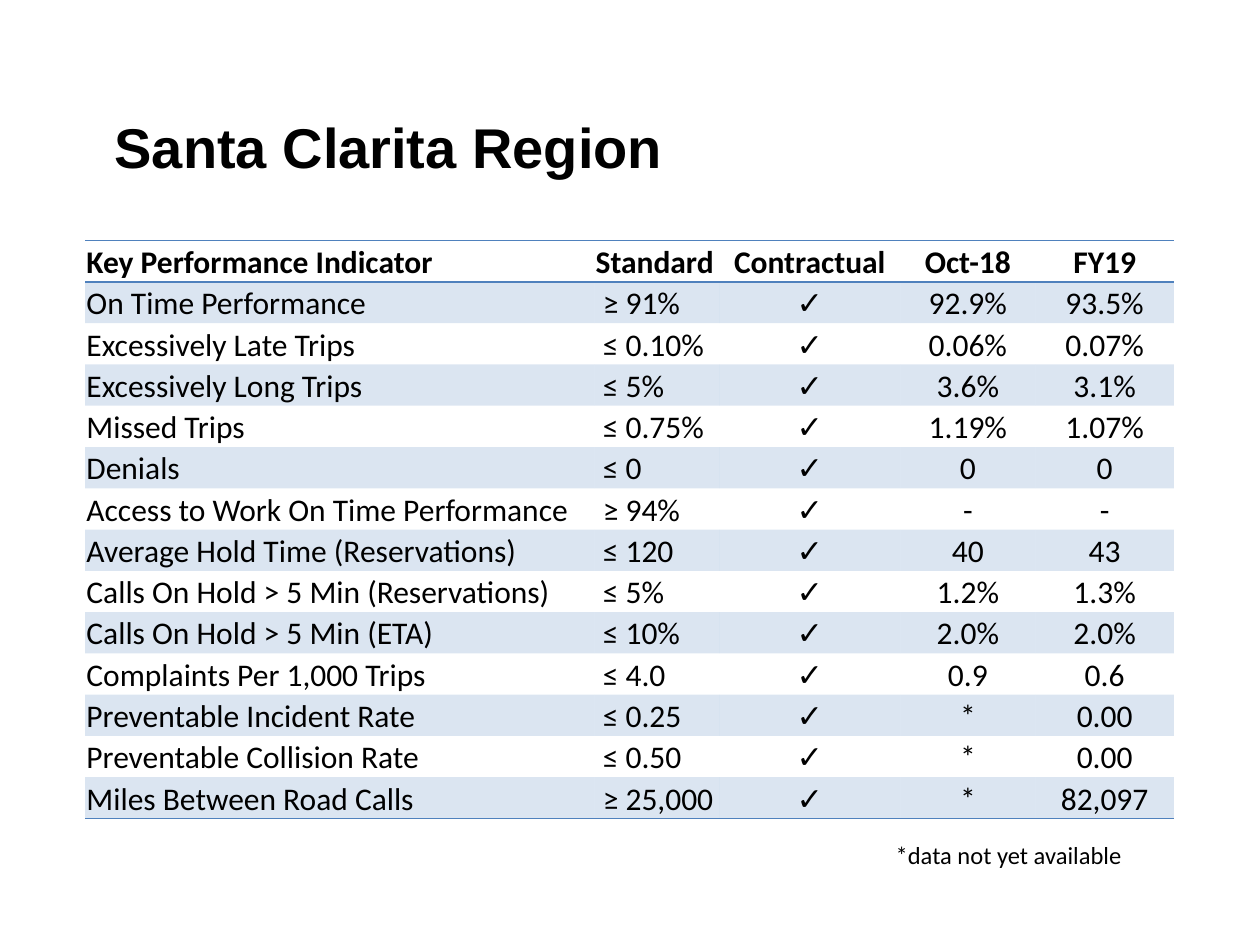
from lxml import etree
from pptx import Presentation
from pptx.dml.color import RGBColor
from pptx.enum.text import MSO_ANCHOR, PP_ALIGN
from pptx.oxml.ns import qn
from pptx.util import Pt

LEFT, CENTER, RIGHT = PP_ALIGN.LEFT, PP_ALIGN.CENTER, PP_ALIGN.RIGHT
MIDDLE, BOTTOM = MSO_ANCHOR.MIDDLE, MSO_ANCHOR.BOTTOM

THEME = {
    "ink": RGBColor(0, 0, 0),
    "accent": "4F81BD",
    "band_alpha": "20000",
    "plain_table": "{2D5ABB26-0587-4C30-8999-92F81FD0307C}",
    "title": {"name": "Arial", "size": Pt(32), "bold": True},
    "header": {"name": "Calibri", "size": Pt(18), "bold": True},
    "body": {"name": "Calibri", "size": Pt(18), "bold": False},
    "note": {"name": "Calibri", "size": Pt(14), "bold": False},
}


def write(frame, text, style, align):
    para = frame.paragraphs[0]
    para.alignment = align
    span = para.add_run()
    span.text = text
    for name, value in THEME[style].items():
        setattr(span.font, name, value)
    span.font.color.rgb = THEME["ink"]


def rule(cell, side):
    line = etree.SubElement(cell._tc.get_or_add_tcPr(), qn(f"a:{side}"), w=str(Pt(1)))
    fill = etree.SubElement(line, qn("a:solidFill"))
    etree.SubElement(fill, qn("a:srgbClr"), val=THEME["accent"])


INDICATORS = [
    ("Key Performance Indicator", "Standard", "Contractual", "Oct-18", "FY19"),
    ("On Time Performance", "≥ 91%", "✓", "92.9%", "93.5%"),
    ("Excessively Late Trips", "≤ 0.10%", "✓", "0.06%", "0.07%"),
    ("Excessively Long Trips", "≤ 5%", "✓", "3.6%", "3.1%"),
    ("Missed Trips", "≤ 0.75%", "✓", "1.19%", "1.07%"),
    ("Denials", "≤ 0", "✓", "0", "0"),
    ("Access to Work On Time Performance", "≥ 94%", "✓", "-", "-"),
    ("Average Hold Time (Reservations)", "≤ 120", "✓", "40", "43"),
    ("Calls On Hold > 5 Min (Reservations)", "≤ 5%", "✓", "1.2%", "1.3%"),
    ("Calls On Hold > 5 Min (ETA)", "≤ 10%", "✓", "2.0%", "2.0%"),
    ("Complaints Per 1,000 Trips", "≤ 4.0", "✓", "0.9", "0.6"),
    ("Preventable Incident Rate", "≤ 0.25", "✓", "*", "0.00"),
    ("Preventable Collision Rate", "≤ 0.50", "✓", "*", "0.00"),
    ("Miles Between Road Calls", "≥ 25,000", "✓", "*", "82,097"),
]
COLUMN_WIDTHS = [291, 71.3, 103.5, 77.2, 79.2]
ROW_HEIGHT = 23.6

deck = Presentation()
deck.slide_width, deck.slide_height = Pt(720), Pt(540)
page = deck.slides.add_slide(deck.slide_layouts[5])

title = page.shapes.title
title.left, title.top, title.width, title.height = Pt(58.3), Pt(60.5), Pt(604), Pt(46)
title.text_frame.vertical_anchor = MIDDLE
write(title.text_frame, "Santa Clarita Region", "title", LEFT)

last = len(INDICATORS) - 1
table = page.shapes.add_table(
    len(INDICATORS), len(COLUMN_WIDTHS), Pt(48.7), Pt(137.5),
    Pt(sum(COLUMN_WIDTHS)), Pt(ROW_HEIGHT * len(INDICATORS)),
).table
table.first_row = table.horz_banding = False
table._tbl.tblPr.find(qn("a:tableStyleId")).text = THEME["plain_table"]
for column, width in zip(table.columns, COLUMN_WIDTHS):
    column.width = Pt(width)

for r, values in enumerate(INDICATORS):
    table.rows[r].height = Pt(ROW_HEIGHT)
    for c, value in enumerate(values):
        cell = table.cell(r, c)
        cell.margin_left = Pt(4.8 if r and c == 1 else 0.72)
        cell.margin_right = cell.margin_top = Pt(0.72)
        cell.margin_bottom = 0
        cell.vertical_anchor = BOTTOM
        if r == 0:
            rule(cell, "lnT")
        if r in (0, last):
            rule(cell, "lnB")
        if r % 2:
            cell.fill.solid()
            cell.fill.fore_color.rgb = RGBColor.from_string(THEME["accent"])
            color = cell._tc.tcPr.find(qn("a:solidFill")).find(qn("a:srgbClr"))
            etree.SubElement(color, qn("a:alpha"), val=THEME["band_alpha"])
        else:
            cell.fill.background()
        write(cell.text_frame, value, "body" if r else "header", LEFT if c < 2 else CENTER)

note = page.shapes.add_textbox(Pt(463.7), Pt(476.6), Pt(184.3), Pt(24.5))
note.text_frame.word_wrap = True
write(note.text_frame, "*data not yet available", "note", RIGHT)

deck.save("out.pptx")
